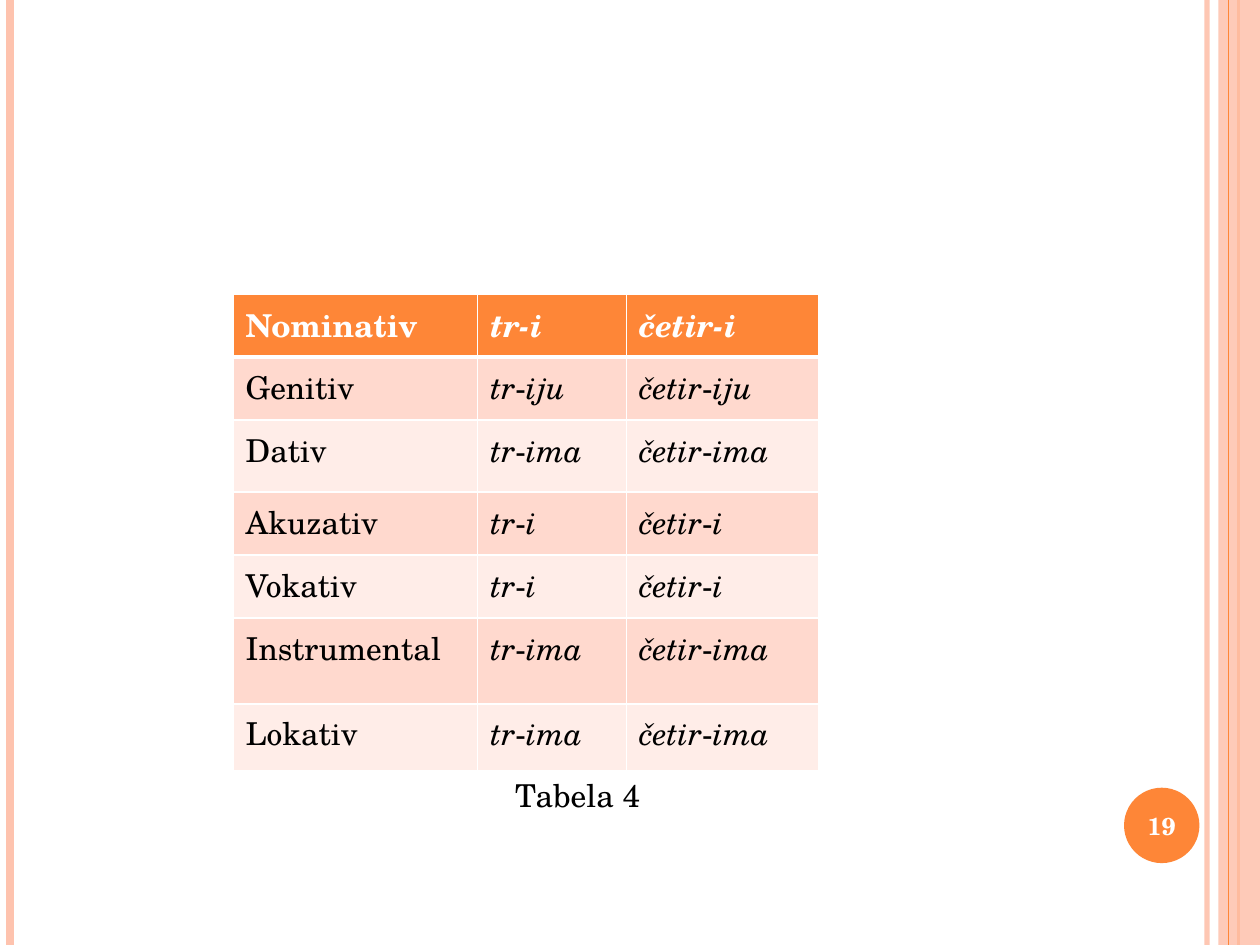
from lxml.etree import SubElement
from pptx import Presentation
from pptx.dml.color import RGBColor
from pptx.enum.shapes import MSO_CONNECTOR, MSO_SHAPE
from pptx.enum.text import MSO_ANCHOR, PP_ALIGN
from pptx.oxml import parse_xml
from pptx.oxml.ns import nsdecls, qn
from pptx.util import Cm, Pt

FONT = "TeX Gyre Schola"
HUES = {
    "pale": "FEC3AE", "accent": "FE8637", "odd": "FFD9CE",
    "even": "FFEDE8", "white": "FFFFFF", "black": "000000",
}
WIDE, HIGH = 25.4, 19.05
COLS = [4.93, 3, 3.87]
ROWS = [
    ("Nominativ", "i", 1.27), ("Genitiv", "iju", 1.27), ("Dativ", "ima", 1.45),
    ("Akuzativ", "i", 1.27), ("Vokativ", "i", 1.27),
    ("Instrumental", "ima", 1.73), ("Lokativ", "ima", 1.34),
]
STEMS = ["tr", "četir"]


def hue(name):
    return RGBColor.from_string(HUES[name])


def style(run, size, color, bold=False, italic=False):
    font = run.font
    font.name, font.size = FONT, Pt(size)
    font.bold, font.italic = bold, italic
    font.color.rgb = hue(color)


def fade(fill, percent):
    """Set the opacity of a solid fill element."""
    SubElement(fill[0], qn("a:alpha"), val=str(percent * 1000))


def stripe(slide, x, color, width, percent=100):
    """Draw a vertical line over the full height of the slide."""
    line = slide.shapes.add_connector(
        MSO_CONNECTOR.STRAIGHT, Cm(x), 0, Cm(x), Cm(HIGH))
    line.line.color.rgb = hue(color)
    line.line.width = Pt(width)
    if percent < 100:
        fade(line.line._ln.find(qn("a:solidFill")), percent)
    SubElement(line._element.spPr, qn("a:effectLst"))


def solid(slide, kind, box, color):
    shape = slide.shapes.add_shape(kind, *map(Cm, box))
    shape.shadow.inherit = False
    shape.fill.solid()
    shape.fill.fore_color.rgb = hue(color)
    shape.line.fill.background()
    return shape


def frame(slide):
    """Draw the stripes and the band at the slide edges."""
    stripe(slide, 24.33, "pale", 3, 93)
    stripe(slide, 0.2, "pale", 4.5)
    stripe(slide, 24.97, "accent", 1.5)
    band = solid(slide, MSO_SHAPE.RECTANGLE, (24.56, 0, WIDE - 24.56, HIGH), "pale")
    fade(band._element.spPr.find(qn("a:solidFill")), 87)
    stripe(slide, 24.77, "accent", 0.75)


def label(slide, box, text, size, color, bold=False):
    area = slide.shapes.add_textbox(*map(Cm, box)).text_frame
    area.word_wrap = True
    area.text = text
    area.vertical_anchor = MSO_ANCHOR.MIDDLE
    para = area.paragraphs[0]
    para.alignment = PP_ALIGN.CENTER
    style(para.runs[0], size, color, bold)


def badge(slide, x, y, size, text):
    """Draw the page number in its circle."""
    solid(slide, MSO_SHAPE.OVAL, (x, y, size, size), "accent")
    label(slide, (x - 0.08, y + 0.04, size + 0.16, size - 0.08), text, 14, "white", True)


def border(cell, top, base):
    props = cell._tc.get_or_add_tcPr()
    for spot, (side, width) in enumerate(
            [("L", 1), ("R", 1), ("T", top), ("B", base)]):
        props.insert(spot, parse_xml(
            f'<a:ln{side} {nsdecls("a")} w="{Pt(width)}"><a:solidFill>'
            f'<a:srgbClr val="{HUES["white"]}"/></a:solidFill></a:ln{side}>'))


def grid(slide, x, y):
    """Place the table of case endings."""
    high = sum(row[2] for row in ROWS)
    table = slide.shapes.add_table(
        len(ROWS), len(COLS), Cm(x), Cm(y), Cm(sum(COLS)), Cm(high)).table
    for col, width in zip(table.columns, COLS):
        col.width = Cm(width)
    for r, (case, end, tall) in enumerate(ROWS):
        table.rows[r].height = Cm(tall)
        head = r == 0
        back = "accent" if head else "odd" if r % 2 else "even"
        for c in range(len(COLS)):
            cell = table.cell(r, c)
            cell.fill.solid()
            cell.fill.fore_color.rgb = hue(back)
            border(cell, 3 if r == 1 else 1, 3 if head else 1)
            para = cell.text_frame.paragraphs[0]
            if c == 0:
                parts = [case]
                para.alignment = PP_ALIGN.JUSTIFY
            elif head:
                parts = [f"{STEMS[c - 1]}-{end}"]
            else:
                parts = [STEMS[c - 1], "-", end]
            for part in parts:
                run = para.add_run()
                run.text = part
                style(run, 18, "white" if head else "black", head,
                      c > 0 and part != "-")


def main():
    deck = Presentation()
    deck.slide_width, deck.slide_height = Cm(WIDE), Cm(HIGH)
    slide = deck.slides.add_slide(deck.slide_layouts[6])
    frame(slide)
    label(slide, (1.27, 15.45, 20.75, 1.17), "Tabela 4", 18, "black")
    grid(slide, 4.7, 5.93)
    badge(slide, 22.66, 15.88, 1.52, "19")
    deck.save("out.pptx")


if __name__ == "__main__":
    main()
